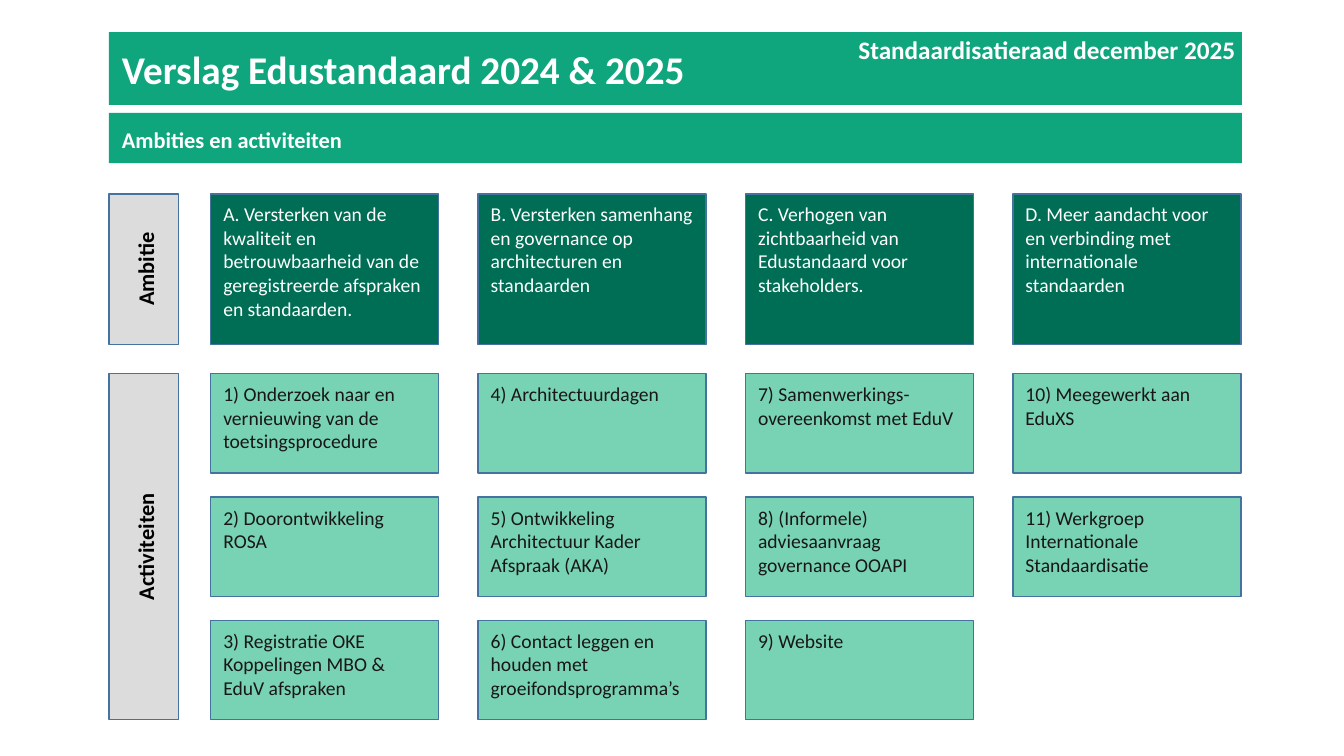
from dataclasses import dataclass

import pptx
import pptx.dml.color
import pptx.enum.shapes
import pptx.enum.text
import pptx.shapes.autoshape
import pptx.util

Pt = pptx.util.Pt
Align = pptx.enum.text.PP_ALIGN
Anchor = pptx.enum.text.MSO_ANCHOR


@dataclass(frozen=True)
class Theme:
    font: str = "Calibri"
    banner: str = "0FA67E"
    ambition: str = "006E54"
    activity: str = "78D2B4"
    label: str = "DCDCDC"
    outline: str = "43739E"
    white: str = "FFFFFF"
    black: str = "000000"
    ink: str = "181717"
    title_size: float = 28
    date_size: float = 18
    heading_size: float = 16
    card_size: float = 14


@dataclass(frozen=True)
class Box:
    left: float
    top: float
    width: float
    height: float


@dataclass(frozen=True)
class Style:
    size: float
    color: str
    fill: str | None = None
    outline: str | None = None
    bold: bool = False
    align: Align = Align.LEFT
    anchor: Anchor = Anchor.TOP
    insets: tuple[float, float, float, float] = (9, 6, 9, 4)
    direction: str = "horz"


@dataclass(frozen=True)
class Pillar:
    ambition: str
    activities: tuple[str, ...]


THEME = Theme()
BANNER_INSETS = (9.36, 9.36, 9.36, 9.36)
TITLE = Style(THEME.title_size, THEME.white, THEME.banner, bold=True, insets=BANNER_INSETS)
SUBTITLE = Style(THEME.heading_size, THEME.white, THEME.banner, bold=True, insets=BANNER_INSETS)
DATE = Style(THEME.date_size, THEME.white, bold=True, align=Align.RIGHT, insets=(7.2, 3.6, 7.2, 3.6))
LABEL = Style(THEME.heading_size, THEME.black, THEME.label, THEME.outline, True,
              Align.CENTER, Anchor.MIDDLE, (4, 0, 2, 0), "vert270")
AMBITION = Style(THEME.card_size, THEME.white, THEME.ambition, THEME.outline)
ACTIVITY = Style(THEME.card_size, THEME.ink, THEME.activity, THEME.outline)

MARGIN, BANNER_WIDTH = 77.76, 809.3
LABEL_WIDTH = 50
PILLAR_LEFT, PILLAR_PITCH, CARD_WIDTH = 150.5, 191, 163
AMBITION_TOP, AMBITION_HEIGHT = 138.5, 107.5
ACTIVITY_TOP, ACTIVITY_PITCH, ACTIVITY_HEIGHT = 267, 88, 71

PILLARS = (
    Pillar("A. Versterken van de kwaliteit en betrouwbaarheid van de geregistreerde afspraken en standaarden.",
           ("1) Onderzoek naar en vernieuwing van de toetsingsprocedure",
            "2) Doorontwikkeling ROSA",
            "3) Registratie OKE Koppelingen MBO & EduV afspraken")),
    Pillar("B. Versterken samenhang en governance op architecturen en standaarden",
           ("4) Architectuurdagen",
            "5) Ontwikkeling Architectuur Kader Afspraak (AKA)",
            "6) Contact leggen en houden met groeifondsprogramma’s")),
    Pillar("C. Verhogen van zichtbaarheid van Edustandaard voor stakeholders.",
           ("7) Samenwerkings-overeenkomst met EduV",
            "8) (Informele) adviesaanvraag governance OOAPI",
            "9) Website")),
    Pillar("D. Meer aandacht voor en verbinding met internationale standaarden",
           ("10) Meegewerkt aan EduXS",
            "11) Werkgroep Internationale Standaardisatie")),
)


def rgb(value: str) -> pptx.dml.color.RGBColor:
    return pptx.dml.color.RGBColor.from_string(value)


def write(shape: pptx.shapes.autoshape.Shape, text: str, style: Style) -> None:
    if style.fill:
        shape.fill.solid()
        shape.fill.fore_color.rgb = rgb(style.fill)
    if style.outline:
        shape.line.color.rgb = rgb(style.outline)
        shape.line.width = Pt(1)
    else:
        shape.line.fill.background()
    frame = shape.text_frame
    frame.word_wrap = True
    frame.auto_size = pptx.enum.text.MSO_AUTO_SIZE.NONE
    frame.vertical_anchor = style.anchor
    frame.margin_left, frame.margin_top, frame.margin_right, frame.margin_bottom = map(Pt, style.insets)
    frame._txBody.bodyPr.set("vert", style.direction)
    frame.text = text
    paragraph = frame.paragraphs[0]
    paragraph.alignment = style.align
    font = paragraph.font
    font.name, font.size, font.bold = THEME.font, Pt(style.size), style.bold
    font.color.rgb = rgb(style.color)


def add_panel(slide: pptx.slide.Slide, box: Box, text: str, style: Style) -> None:
    panel = slide.shapes.add_shape(
        pptx.enum.shapes.MSO_SHAPE.RECTANGLE,
        Pt(box.left), Pt(box.top), Pt(box.width), Pt(box.height))
    panel.shadow.inherit = False
    write(panel, text, style)


def add_pillar(slide: pptx.slide.Slide, column: int, pillar: Pillar) -> None:
    left = PILLAR_LEFT + column * PILLAR_PITCH
    add_panel(slide, Box(left, AMBITION_TOP, CARD_WIDTH, AMBITION_HEIGHT), pillar.ambition, AMBITION)
    for row, activity in enumerate(pillar.activities):
        top = ACTIVITY_TOP + row * ACTIVITY_PITCH
        add_panel(slide, Box(left, top, CARD_WIDTH, ACTIVITY_HEIGHT), activity, ACTIVITY)


def main() -> None:
    """Build the Edustandaard report slide and save it."""
    deck = pptx.Presentation()
    deck.slide_width, deck.slide_height = Pt(960), Pt(540)
    slide = deck.slides.add_slide(deck.slide_layouts.get_by_name("Title Only"))

    title = slide.shapes.title
    title.left, title.top, title.width, title.height = Pt(MARGIN), Pt(23), Pt(BANNER_WIDTH), Pt(52)
    write(title, "Verslag Edustandaard 2024 & 2025", TITLE)
    add_panel(slide, Box(MARGIN, 80.6, BANNER_WIDTH, 36), "Ambities en activiteiten", SUBTITLE)
    date = slide.shapes.add_textbox(Pt(552), Pt(21), Pt(337.7), Pt(29))
    write(date, "Standaardisatieraad december 2025", DATE)

    activities_height = 2 * ACTIVITY_PITCH + ACTIVITY_HEIGHT
    add_panel(slide, Box(MARGIN, AMBITION_TOP, LABEL_WIDTH, AMBITION_HEIGHT), "Ambitie", LABEL)
    add_panel(slide, Box(MARGIN, ACTIVITY_TOP, LABEL_WIDTH, activities_height), "Activiteiten", LABEL)
    for column, pillar in enumerate(PILLARS):
        add_pillar(slide, column, pillar)

    deck.save("out.pptx")


if __name__ == "__main__":
    main()
